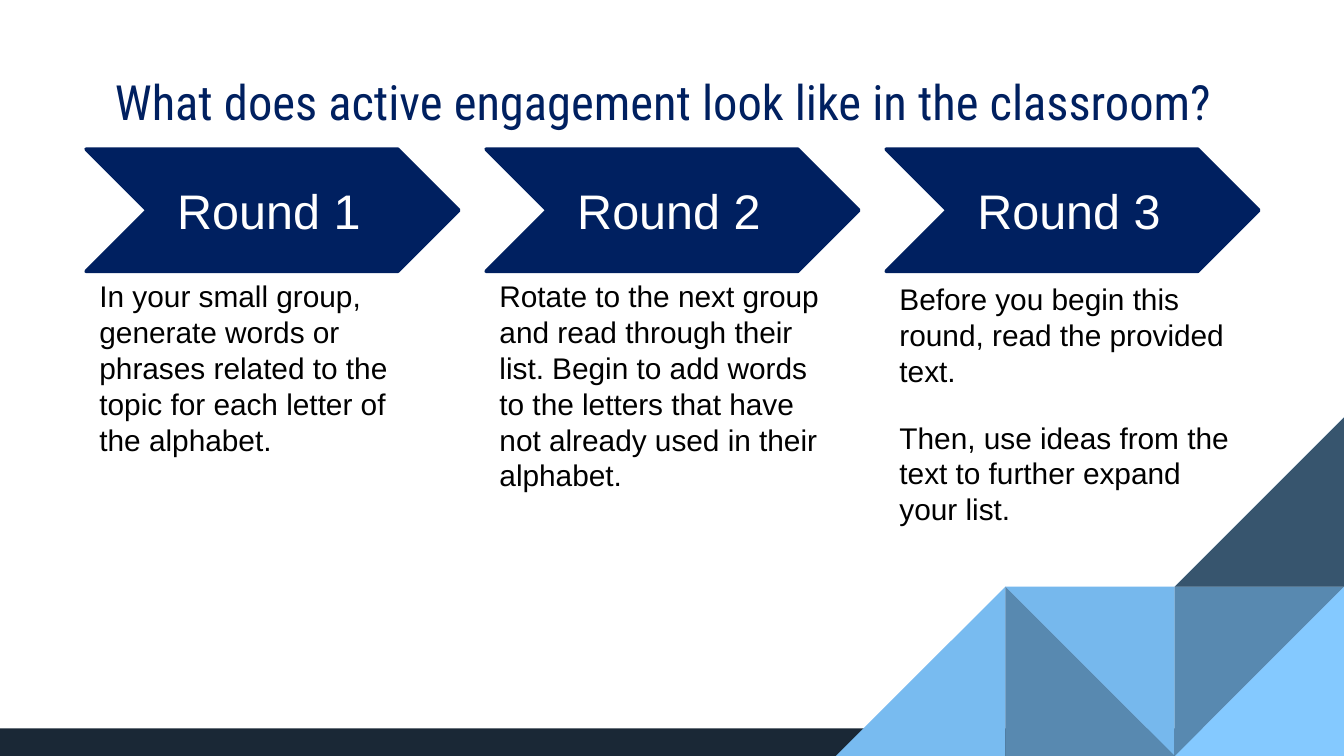
from lxml import etree
from pptx import Presentation
from pptx.dml.color import RGBColor
from pptx.enum.shapes import MSO_SHAPE
from pptx.enum.text import MSO_ANCHOR, PP_ALIGN
from pptx.oxml.ns import qn
from pptx.util import Cm, Pt

RECTANGLE, CHEVRON = MSO_SHAPE.RECTANGLE, MSO_SHAPE.CHEVRON
TRIANGLE = MSO_SHAPE.RIGHT_TRIANGLE
TOP, MIDDLE = MSO_ANCHOR.TOP, MSO_ANCHOR.MIDDLE
LEFT, CENTER = PP_ALIGN.LEFT, PP_ALIGN.CENTER

COLORS = {
    "navy": "002060",
    "footer": "1A2836",
    "sky": "80C7FF",
    "black": "000000",
    "white": "FFFFFF",
}
WIDTH, HEIGHT = 25.4, 14.29
TILE = 3.2
COLUMN_LEFT, COLUMN_PITCH = 1.63, 7.56
CHEVRON_TOP, CHEVRON_WIDTH, CHEVRON_HEIGHT = 2.82, 7.04, 2.31

# column from the right, row from the bottom, rotation, shade, opacity
TILES = [
    (2, 1, 180, "black", 7),
    (2, 1, 0, "black", 31),
    (3, 1, 270, "black", 6),
    (1, 2, 270, "black", 57),
    (1, 1, 270, "white", 4),
    (1, 1, 90, "black", 31),
]
ROUNDS = [
    [(5.13, 6.78, "In your small group, generate words or phrases related to the "
                  "topic for each letter of the alphabet.")],
    [(5.13, 6.78, "Rotate to the next group and read through their list. Begin to add "
                  "words to the letters that have not already used in their alphabet.")],
    [(5.18, 7.04, "Before you begin this round, read the provided text."),
     (7.8, 7.01, "Then, use ideas from the text to further expand your list.")],
]


class SlideBuilder:
    """Draws styled elements on the current slide."""

    def __init__(self, slide, font="Arial"):
        self.slide = slide
        self.font = font

    def color(self, name):
        return RGBColor.from_string(COLORS[name])

    def shape(self, kind, left, top, width, height, fill, rotation=0, opacity=100, line=0):
        shape = self.slide.shapes.add_shape(kind, Cm(left), Cm(top), Cm(width), Cm(height))
        shape.shadow.inherit = False
        shape.rotation = rotation
        shape.fill.solid()
        shape.fill.fore_color.rgb = self.color(fill)
        if opacity < 100:
            tint = shape.fill._xPr.find(".//" + qn("a:srgbClr"))
            etree.SubElement(tint, qn("a:alpha"), val=str(opacity * 1000))
        if line:
            shape.line.color.rgb = self.color(fill)
            shape.line.width = Pt(line)
        else:
            shape.line.fill.background()

    def text(self, words, left, top, width, height, size, color,
             font=None, align=LEFT, anchor=TOP):
        box = self.slide.shapes.add_textbox(Cm(left), Cm(top), Cm(width), Cm(height))
        frame = box.text_frame
        frame.word_wrap = True
        frame.vertical_anchor = anchor
        para = frame.paragraphs[0]
        para.text = words
        para.alignment = align
        para.font.name = font or self.font
        para.font.size = Pt(size)
        para.font.color.rgb = self.color(color)


def main():
    deck = Presentation()
    deck.slide_width, deck.slide_height = Cm(WIDTH), Cm(HEIGHT)
    page = SlideBuilder(deck.slides.add_slide(deck.slide_layouts[6]))

    page.shape(RECTANGLE, 0, 13.77, WIDTH, 0.52, "footer")
    base = [(column, row, turn, "sky", 100) for column, row, turn, *_ in TILES]
    for column, row, turn, shade, opacity in base + TILES:
        page.shape(TRIANGLE, WIDTH - column * TILE, HEIGHT - row * TILE, TILE, TILE,
                   shade, turn, opacity)

    page.text("What does active engagement look like in the classroom?",
              0, 0.99, 25.1, 1.83, 26, "navy", "Roboto Condensed", CENTER, MIDDLE)
    for index, notes in enumerate(ROUNDS):
        left = COLUMN_LEFT + index * COLUMN_PITCH
        page.shape(CHEVRON, left, CHEVRON_TOP, CHEVRON_WIDTH, CHEVRON_HEIGHT, "navy", line=2)
        page.text(f"Round {index + 1}", left + 1.47, 3.3, 4.09, 1.37, 26, "white")
        for top, width, words in notes:
            page.text(words, left, top, width, 2.31, 16, "black")

    deck.save("out.pptx")


if __name__ == "__main__":
    main()
